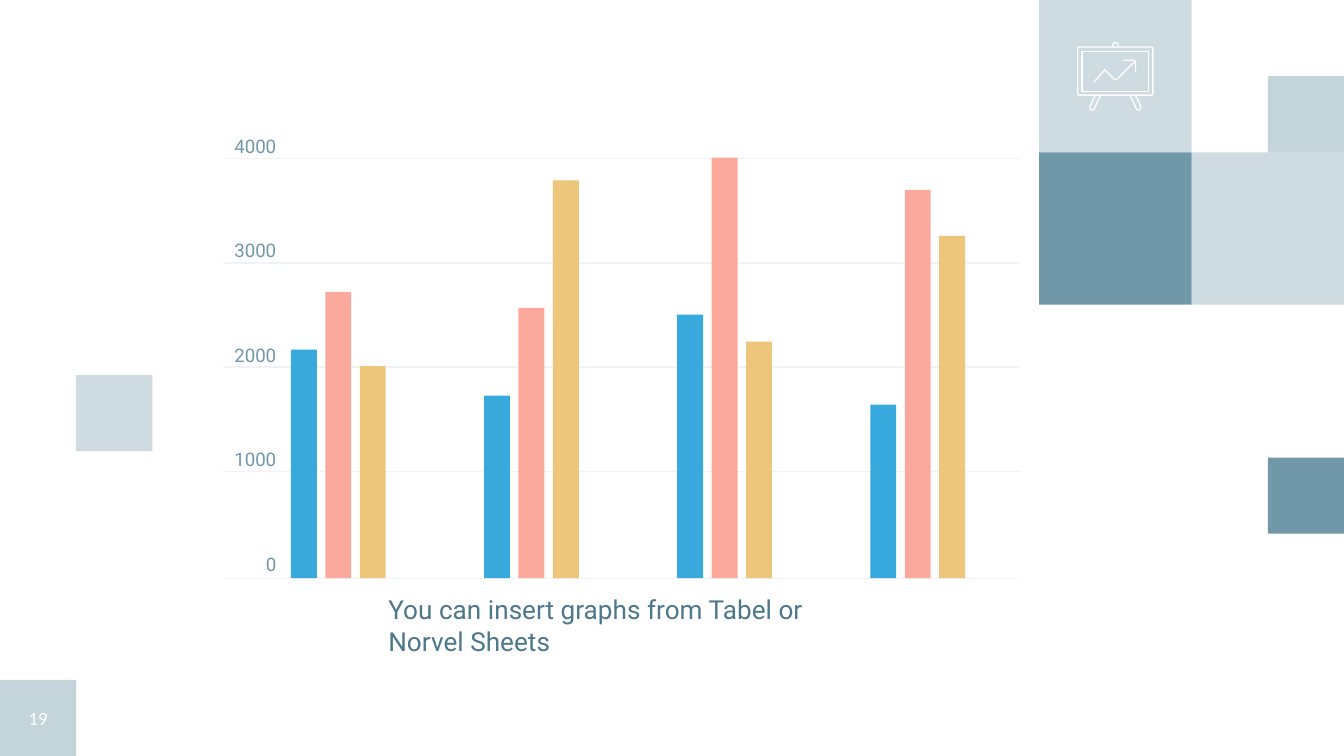
from typing import NamedTuple

from lxml import etree
from pptx import Presentation
from pptx.dml.color import RGBColor
from pptx.enum.shapes import MSO_CONNECTOR, MSO_SHAPE
from pptx.enum.text import MSO_ANCHOR, PP_ALIGN
from pptx.oxml.ns import qn
from pptx.util import Cm, Pt

RECTANGLE = MSO_SHAPE.RECTANGLE
STRAIGHT = MSO_CONNECTOR.STRAIGHT
TOP, MIDDLE = MSO_ANCHOR.TOP, MSO_ANCHOR.MIDDLE
LEFT, CENTER, RIGHT = PP_ALIGN.LEFT, PP_ALIGN.CENTER, PP_ALIGN.RIGHT

WHITE = RGBColor(0xFF, 0xFF, 0xFF)
PALE = RGBColor(0xCE, 0xDB, 0xE0)
SLATE = RGBColor(0x71, 0x98, 0xA9)
CAPTION = RGBColor(0x4D, 0x77, 0x8A)
GRID = RGBColor(0xEF, 0xF3, 0xF5)
BLUE = RGBColor(0x37, 0xA9, 0xDD)
PINK = RGBColor(0xFA, 0xA9, 0x9C)
GOLD = RGBColor(0xED, 0xC6, 0x7B)

WIDTH, HEIGHT = 25.4, 14.29
LARGE, SMALL = 2.88, 1.44
BASELINE = 10.93
GRID_LEFT, GRID_RIGHT, GRID_TOP, GRID_STEP = 4.22, 19.28, 3.0, 1.97
BAR_LEFT, BAR_WIDTH, BAR_STEP, GROUP_STEP = 5.5, 0.49, 0.65, 3.65
SERIES_COLORS = (BLUE, PINK, GOLD)
BAR_HEIGHTS = (
    (4.32, 5.41, 4.01),
    (3.45, 5.11, 7.52),
    (4.98, 7.95, 4.47),
    (3.28, 7.34, 6.47),
)


class Tile(NamedTuple):
    left: float
    top: float
    size: float
    color: RGBColor
    opacity: int = 100


class Stroke(NamedTuple):
    """One outline of the icon, in hundredths of a centimetre."""
    points: tuple[tuple[int, int], ...]
    closed: bool = False


TILES = (
    Tile(WIDTH - LARGE, LARGE, LARGE, PALE),
    Tile(WIDTH - 2 * LARGE, 0, LARGE, PALE),
    Tile(WIDTH - 2 * LARGE, LARGE, LARGE, SLATE),
    Tile(SMALL, 7.09, SMALL, PALE),
    Tile(0, HEIGHT - SMALL, SMALL, SLATE, 41),
    Tile(WIDTH - SMALL, 8.65, SMALL, SLATE),
    Tile(WIDTH - SMALL, SMALL, SMALL, SLATE, 41),
)

ICON_CENTER = 2108
LEG = ((2070, 180), (2060, 201), (2060, 205), (2062, 208), (2066, 208),
       (2068, 206), (2080, 180))
ICON = (
    Stroke(((2039, 89), (2177, 89), (2179, 91), (2179, 178), (2177, 180),
            (2039, 180), (2037, 178), (2037, 91)), closed=True),
    Stroke(((2113, 89), (2113, 84), (2110, 81), (2106, 81), (2103, 84),
            (2103, 89))),
    Stroke(LEG),
    Stroke(tuple((2 * ICON_CENTER - x, y) for x, y in LEG)),
    Stroke(((2045, 97), (2045, 173), (2171, 173), (2171, 97)), closed=True),
    Stroke(((2144, 117), (2111, 150), (2106, 150), (2088, 132), (2068, 155))),
    Stroke(((2123, 114), (2144, 114), (2146, 117), (2146, 137))),
)


def add_rectangle(page, left: float, top: float, width: float, height: float,
                  color: RGBColor, opacity: int = 100) -> None:
    box = page.shapes.add_shape(RECTANGLE, Cm(left), Cm(top), Cm(width), Cm(height))
    box.shadow.inherit = False
    box.fill.solid()
    box.fill.fore_color.rgb = color
    box.line.fill.background()
    if opacity < 100:
        tint = box._element.spPr.find(qn("a:solidFill"))[0]
        etree.SubElement(tint, qn("a:alpha"), val=str(opacity * 1000))


def add_stroke(page, stroke: Stroke) -> None:
    start, *rest = stroke.points
    builder = page.shapes.build_freeform(*start, scale=Cm(0.01))
    builder.add_line_segments(rest, close=stroke.closed)
    outline = builder.convert_to_shape()
    outline.shadow.inherit = False
    outline.fill.background()
    outline.line.color.rgb = WHITE
    outline.line.width = Pt(0.75)


def add_grid_line(page, top: float) -> None:
    line = page.shapes.add_connector(
        STRAIGHT, Cm(GRID_LEFT), Cm(top), Cm(GRID_RIGHT), Cm(top))
    line.line.color.rgb = GRID
    line.line.width = Pt(0.75)
    etree.SubElement(line._element.spPr, qn("a:effectLst"))


def add_text(page, text: str, left: float, top: float, width: float,
             height: float, *, font: str, size: float, color: RGBColor,
             align=LEFT, anchor=TOP, inset: float = 0.25, gap: float = 0) -> None:
    """Add one paragraph per line of text, with gap points between them."""
    box = page.shapes.add_textbox(Cm(left), Cm(top), Cm(width), Cm(height))
    frame = box.text_frame
    frame.word_wrap = True
    frame.vertical_anchor = anchor
    frame.margin_left = frame.margin_right = Cm(inset)
    frame.margin_top = frame.margin_bottom = Cm(inset)
    frame.text = text
    for index, para in enumerate(frame.paragraphs):
        para.alignment = align
        if index and gap:
            para.space_before = Pt(gap)
        for span in para.runs:
            span.font.name = font
            span.font.size = Pt(size)
            span.font.color.rgb = color


def add_bars(page) -> None:
    for group, heights in enumerate(BAR_HEIGHTS):
        for series, (height, color) in enumerate(zip(heights, SERIES_COLORS)):
            left = BAR_LEFT + group * GROUP_STEP + series * BAR_STEP
            add_rectangle(page, left, BASELINE - height, BAR_WIDTH, height, color)


def main() -> None:
    deck = Presentation()
    deck.slide_width, deck.slide_height = Cm(WIDTH), Cm(HEIGHT)
    page = deck.slides.add_slide(deck.slide_layouts[6])

    for tile in TILES:
        add_rectangle(page, tile.left, tile.top, tile.size, tile.size,
                      tile.color, tile.opacity)
    for stroke in ICON:
        add_stroke(page, stroke)

    add_text(page, "You can insert graphs from Tabel or Norvel Sheets",
             7.09, 10.97, 9.3, 2.29, font="Roboto", size=14, color=CAPTION)
    add_text(page, "19", 0, HEIGHT - SMALL, SMALL, SMALL, font="Calibri",
             size=10, color=WHITE, align=CENTER, anchor=MIDDLE)

    for row in range(4):
        add_grid_line(page, GRID_TOP + row * GRID_STEP)
    add_grid_line(page, BASELINE)
    labels = "\n".join(str(value) for value in range(4000, -1, -1000))
    add_text(page, labels, GRID_LEFT, 2.54, 1.0, 8.4, font="Roboto", size=10,
             color=SLATE, align=RIGHT, inset=0, gap=44)
    add_bars(page)

    deck.save("out.pptx")


if __name__ == "__main__":
    main()
